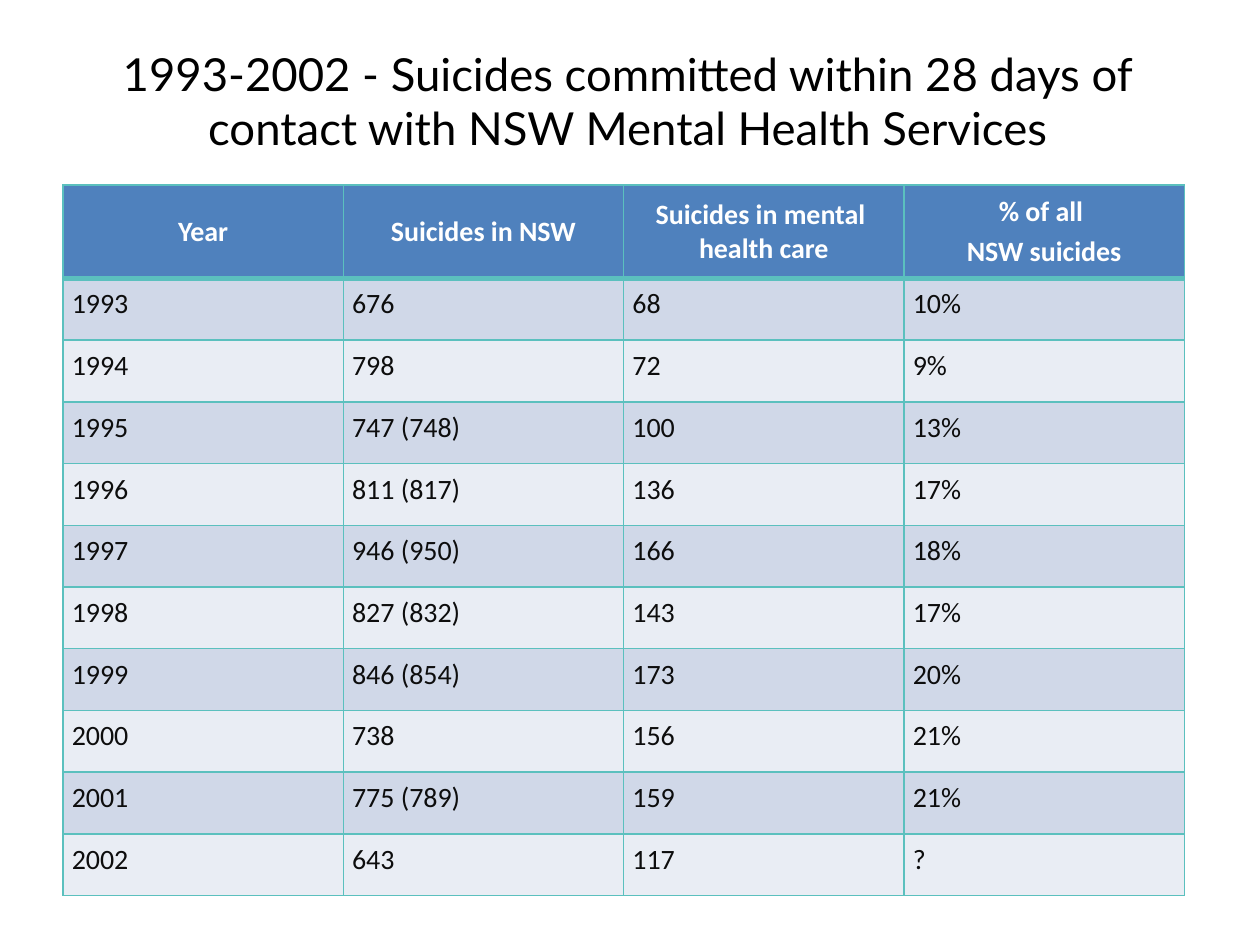
import pptx
import pptx.dml.color
import pptx.enum.text
import pptx.oxml
import pptx.oxml.ns
import pptx.util
from pptx.dml.color import RGBColor
from pptx.util import Inches

# Content: a header holds paragraphs, a paragraph holds lines
TITLE = "1993-2002 - Suicides committed within 28 days of contact with NSW Mental Health Services"
HEADERS = [
    [["Year"]],
    [["Suicides in NSW"]],
    [["Suicides in mental ", "health care"]],
    [["% of all "], ["NSW suicides"]],
]
RECORDS = [
    ("1993", "676", "68", "10%"),
    ("1994", "798", "72", "9%"),
    ("1995", "747 (748)", "100", "13%"),
    ("1996", "811 (817)", "136", "17%"),
    ("1997", "946 (950)", "166", "18%"),
    ("1998", "827 (832)", "143", "17%"),
    ("1999", "846 (854)", "173", "20%"),
    ("2000", "738", "156", "21%"),
    ("2001", "775 (789)", "159", "21%"),
    ("2002", "643", "117", "?"),
]

# Formats
BLACK = RGBColor(0x00, 0x00, 0x00)
WHITE = RGBColor(0xFF, 0xFF, 0xFF)
INK = RGBColor(0x0D, 0x0D, 0x0D)
BLUE = RGBColor(0x4F, 0x81, 0xBD)
BANDS = [RGBColor(0xD0, 0xD8, 0xE8), RGBColor(0xE9, 0xED, 0xF4)]
TEAL = RGBColor(0x5B, 0xC0, 0xBE)
ALIGN = pptx.enum.text.PP_ALIGN
ANCHOR = pptx.enum.text.MSO_ANCHOR
TITLE_FONT = {"name": "Lato", "size": pptx.util.Pt(26), "bold": False}
HEADER_FONT = {"name": "Calibri", "size": pptx.util.Pt(16), "bold": True}
BODY_FONT = {**HEADER_FONT, "bold": False}
MARGINS = ("margin_left", "margin_top", "margin_right", "margin_bottom")

LEFT, TOP, WIDTH = 0.5, 1.47, 8.9
HEADER_HEIGHT, ROW_HEIGHT = 0.74, 0.49


def write(frame, paragraphs, font, color, align, space_after=0):
    for index, lines in enumerate(paragraphs):
        para = frame.add_paragraph() if index else frame.paragraphs[0]
        para.alignment = align
        para.space_after = pptx.util.Pt(space_after)
        for number, line in enumerate(lines):
            if number:
                para.add_line_break()
            span = para.add_run()
            span.text = line
            for name, value in font.items():
                setattr(span.font, name, value)
            span.font.color.rgb = color


def add_borders(cell, bottom_width):
    properties = cell._tc.get_or_add_tcPr()
    widths = {"lnL": 1, "lnR": 1, "lnT": 1, "lnB": bottom_width}
    for index, (side, width) in enumerate(widths.items()):
        line = pptx.oxml.parse_xml(
            f'<a:{side} {pptx.oxml.ns.nsdecls("a")} w="{pptx.util.Pt(width)}">'
            f'<a:solidFill><a:srgbClr val="{TEAL}"/></a:solidFill></a:{side}>')
        properties.insert(index, line)


def fill_cell(cell, paragraphs, fill, font, color, align, anchor, bottom_width):
    for margin in MARGINS:
        setattr(cell, margin, Inches(0.07))
    cell.vertical_anchor = anchor
    cell.fill.solid()
    cell.fill.fore_color.rgb = fill
    write(cell.text_frame, paragraphs, font, color, align, space_after=3)
    add_borders(cell, bottom_width)


def main():
    deck = pptx.Presentation()
    deck.slide_width, deck.slide_height = Inches(10), Inches(7.5)
    page = deck.slides.add_slide(deck.slide_layouts[6])

    # Title
    box = page.shapes.add_textbox(Inches(0.5), Inches(0.17), Inches(8.97), Inches(1.25))
    box.text_frame.word_wrap = True
    box.text_frame.vertical_anchor = ANCHOR.MIDDLE
    write(box.text_frame, [[TITLE]], TITLE_FONT, BLACK, ALIGN.CENTER)

    # Table grid
    height = HEADER_HEIGHT + ROW_HEIGHT * len(RECORDS)
    table = page.shapes.add_table(
        len(RECORDS) + 1, len(HEADERS),
        Inches(LEFT), Inches(TOP), Inches(WIDTH), Inches(height)).table
    for column in table.columns:
        column.width = Inches(WIDTH / len(HEADERS))
    for index, row in enumerate(table.rows):
        row.height = Inches(ROW_HEIGHT if index else HEADER_HEIGHT)

    # Header row
    for column, paragraphs in enumerate(HEADERS):
        fill_cell(table.cell(0, column), paragraphs, BLUE, HEADER_FONT, WHITE,
                  ALIGN.CENTER, ANCHOR.MIDDLE, bottom_width=3)

    # Yearly figures in alternating bands
    for index, record in enumerate(RECORDS):
        for column, value in enumerate(record):
            fill_cell(table.cell(index + 1, column), [[value]], BANDS[index % 2],
                      BODY_FONT, INK, ALIGN.JUSTIFY, ANCHOR.TOP, bottom_width=1)

    deck.save("out.pptx")


if __name__ == "__main__":
    main()
